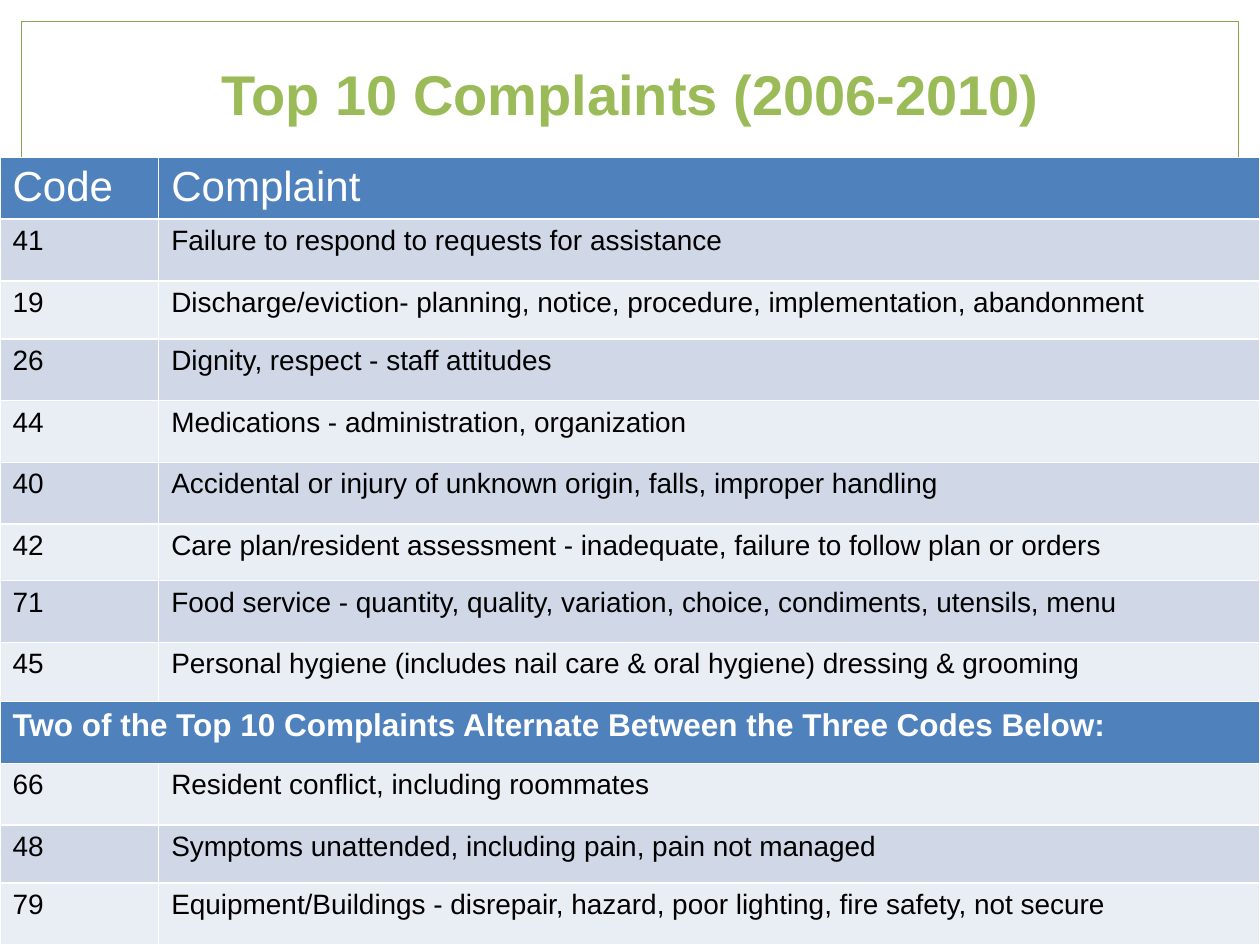
"""Build the Top 10 Complaints slide: a framed title above a table of complaint codes."""
import pptx
import pptx.dml.color
import pptx.enum.shapes
import pptx.enum.text
import pptx.oxml
import pptx.oxml.ns
import pptx.util
from pptx.util import Inches

THEME = {
    "font": "Arial",
    "green": "9BBB59", "frame": "89A54F", "blue": "4F81BD",
    "dark_band": "D0D8E8", "light_band": "E9EDF4",
    "white": "FFFFFF", "black": "000000",
    "title": 32, "header": 24, "section": 18, "body": 16,
}
BACKDROP = [
    ((0, 0, 10, 0.17), "white", None),
    ((9.83, 0, 0.17, 7.5), "white", None),
    ((0, 0, 0.17, 7.5), "white", None),
    ((0.16, 6.99, 9.66, 0.34), "green", None),
    ((0.17, 0.17, 9.66, 7.16), None, "frame"),
]
ROWS = [
    ("Code", "Complaint"),
    ("41", "Failure to respond to requests for assistance"),
    ("19", "Discharge/eviction- planning, notice, procedure, implementation, abandonment"),
    ("26", "Dignity, respect - staff attitudes"),
    ("44", "Medications - administration, organization"),
    ("40", "Accidental or injury of unknown origin, falls, improper handling"),
    ("42", "Care plan/resident assessment - inadequate, failure to follow plan or orders"),
    ("71", "Food service - quantity, quality, variation, choice, condiments, utensils, menu"),
    ("45", "Personal hygiene (includes nail care & oral hygiene) dressing & grooming"),
    ("Two of the Top 10 Complaints Alternate Between the Three Codes Below:",),
    ("66", "Resident conflict, including roommates"),
    ("48", "Symptoms unattended, including pain, pain not managed"),
    ("79", "Equipment/Buildings - disrepair, hazard, poor lighting, fire safety, not secure"),
]
ROW_HEIGHT = 0.49
SHORT_ROWS = {2: 0.46, 6: 0.45, 8: 0.47, 11: 0.46}


def paint(fill, color):
    if color:
        fill.solid()
        fill.fore_color.rgb = pptx.dml.color.RGBColor.from_string(THEME[color])
    else:
        fill.background()


def write(tf, text, size, color, bold=False):
    p = tf.paragraphs[0]
    r = p.add_run()
    r.text = text
    formats = {"name": THEME["font"], "size": pptx.util.Pt(THEME[size]), "bold": bold}
    for name, value in formats.items():
        setattr(r.font, name, value)
    paint(r.font.fill, color)
    return p


prs = pptx.Presentation()
prs.slide_width, prs.slide_height = Inches(10), Inches(7.5)
s = prs.slides.add_slide(prs.slide_layouts[6])

for box, fill, line in BACKDROP:
    sp = s.shapes.add_shape(pptx.enum.shapes.MSO_SHAPE.RECTANGLE, *map(Inches, box))
    sp.shadow.inherit = False
    paint(sp.fill, fill)
    paint(sp.line.fill, line)
    if line:
        sp.line.width = pptx.util.Pt(0.75)

table = s.shapes.add_table(len(ROWS), 2, Inches(0), Inches(1.25), Inches(10), Inches(6.25)).table
for column, width in zip(table.columns, (1.26, 8.74)):
    column.width = Inches(width)

for i, texts in enumerate(ROWS):
    table.rows[i].height = Inches(SHORT_ROWS.get(i, ROW_HEIGHT))
    section = len(texts) == 1
    if section:
        table.cell(i, 0).merge(table.cell(i, 1))
    if i == 0 or section:
        fill, color = "blue", "white"
        size = "section" if section else "header"
    else:
        fill, color, size = "dark_band" if i % 2 else "light_band", "black", "body"
    for j in range(2):
        cell = table.cell(i, j)
        tcPr = cell._tc.get_or_add_tcPr()
        for side in "LRTB":
            tcPr.append(pptx.oxml.parse_xml(
                f'<a:ln{side} {pptx.oxml.ns.nsdecls("a")} w="{pptx.util.Pt(1)}">'
                f'<a:solidFill><a:srgbClr val="{THEME["white"]}"/></a:solidFill></a:ln{side}>'))
        paint(cell.fill, fill)
    for j, text in enumerate(texts):
        write(table.cell(i, j).text_frame, text, size, color, bold=section)

title = s.shapes.add_textbox(Inches(0.42), Inches(0.42), Inches(9.17), Inches(0.63))
tf = title.text_frame
tf.word_wrap = True
tf.auto_size = pptx.enum.text.MSO_AUTO_SIZE.SHAPE_TO_FIT_TEXT
p = write(tf, "Top 10 Complaints (2006-2010)", "title", "green", bold=True)
p.alignment = pptx.enum.text.PP_ALIGN.CENTER

prs.save("out.pptx")
